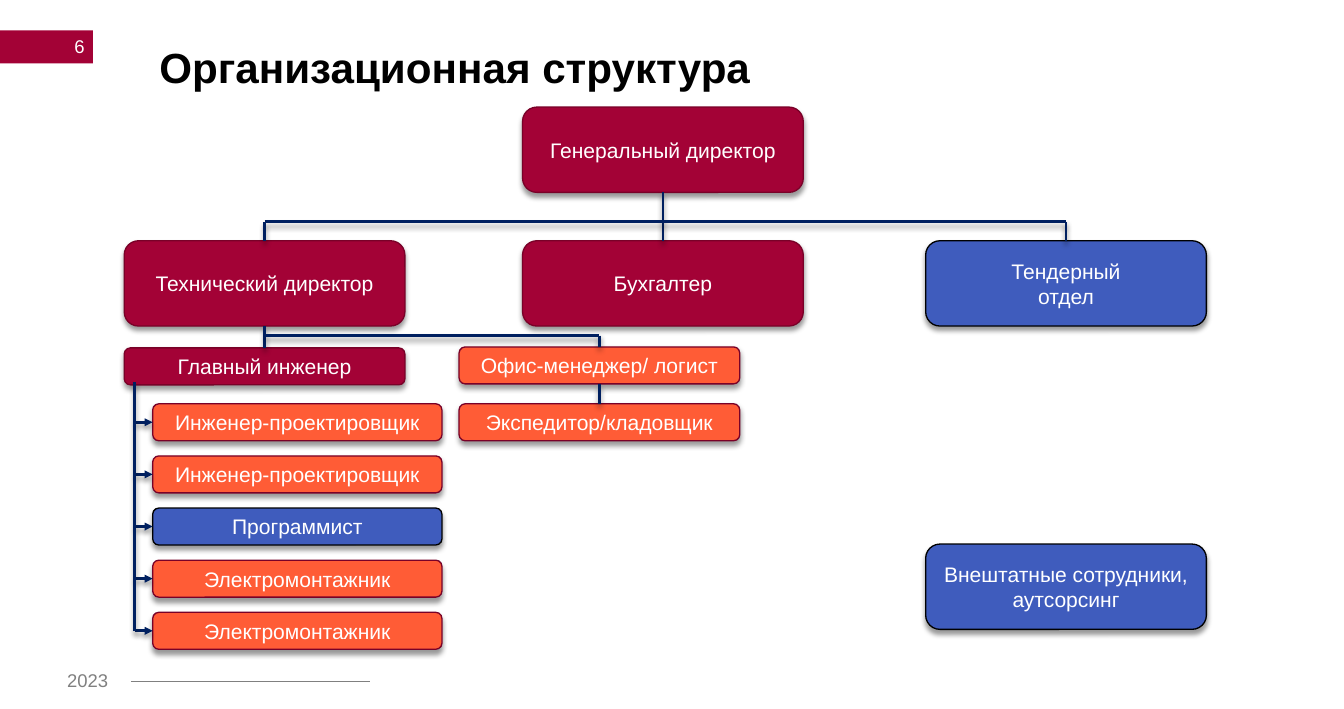
"""Builds the organisation chart slide."""
import pptx
import pptx.util
import pptx.dml.color
import pptx.enum.shapes
import pptx.enum.text
import pptx.oxml
import pptx.oxml.ns

Inches, Pt = pptx.util.Inches, pptx.util.Pt
ALIGN = pptx.enum.text.PP_ALIGN
ANCHOR = pptx.enum.text.MSO_ANCHOR
SHAPE = pptx.enum.shapes.MSO_SHAPE
LINE = pptx.enum.shapes.MSO_CONNECTOR.STRAIGHT

TITLE = "Организационная структура"
YEAR, PAGE = "2023", "6"
RED, ORANGE, BLUE = "A30236", "FF5C36", "3F5CBD"
EDGES = {RED: "790128", ORANGE: "790128", BLUE: "000000"}
NAVY, GREY, WHITE, BLACK = "002060", "808080", "FFFFFF", "000000"
WIDE, TALL, LOW = 2.96, 0.9, 0.39

BOXES = {
    "head": ("Генеральный директор", 5.51, 1.13, TALL, RED),
    "tech": ("Технический директор", 1.31, 2.54, TALL, RED),
    "books": ("Бухгалтер", 5.51, 2.54, TALL, RED),
    "tender": ("Тендерный\nотдел", 9.76, 2.54, TALL, BLUE),
    "chief": ("Главный инженер", 1.31, 3.67, LOW, RED),
    "office": ("Офис-менеджер/ логист", 4.84, 3.66, LOW, ORANGE),
    "store": ("Экспедитор/кладовщик", 4.84, 4.26, LOW, ORANGE),
    "extern": ("Внештатные сотрудники,\nаутсорсинг", 9.76, 5.74, TALL, BLUE),
}
STAFF = [
    ("Инженер-проектировщик", ORANGE),
    ("Инженер-проектировщик", ORANGE),
    ("Программист", BLUE),
    ("Электромонтажник", ORANGE),
    ("Электромонтажник", ORANGE),
]
STAFF_X, STAFF_Y, STAFF_W, STEP = 1.61, 4.26, 3.05, 0.55
SPINE_X, SPINE_Y = 1.42, 4.03
LINKS = [("head", "books"), ("tech", "chief"), ("office", "store")]
BARS = [(2.34, "tech", "tender"), (3.54, "chief", "office")]
DROPS = [(2.34, "tech"), (2.34, "tender"), (3.54, "office")]

deck = pptx.Presentation()
deck.slide_width, deck.slide_height = Inches(14.17), Inches(7.48)
slide = deck.slides.add_slide(deck.slide_layouts[5])
shapes = slide.shapes


def color(code):
    return pptx.dml.color.RGBColor.from_string(code)


def style(frame, size, code, align, bold=False):
    for para in frame.paragraphs:
        para.alignment = align
        for run in para.runs:
            run.font.name, run.font.size = "Arial", Pt(size)
            run.font.bold = bold
            run.font.color.rgb = color(code)


def effect(shape, shade=True):
    for old in shape._element.spPr.findall(pptx.oxml.ns.qn("a:effectLst")):
        shape._element.spPr.remove(old)
    glow = ('<a:outerShdw blurRad="50800" dist="38100" dir="5400000" rotWithShape="0">'
            '<a:srgbClr val="000000"><a:alpha val="40000"/></a:srgbClr></a:outerShdw>')
    shape._element.spPr.append(pptx.oxml.parse_xml(
        f'<a:effectLst {pptx.oxml.ns.nsdecls("a")}>{glow if shade else ""}</a:effectLst>'))


def label(text, x, y, w, h, code, align, anchor):
    frame = shapes.add_textbox(Inches(x), Inches(y), Inches(w), Inches(h)).text_frame
    frame.word_wrap = True
    frame.vertical_anchor = anchor
    frame.text = text
    style(frame, 14, code, align)


def box(text, x, y, w, h, fill):
    shape = shapes.add_shape(SHAPE.ROUNDED_RECTANGLE, Inches(x), Inches(y),
                             Inches(w), Inches(h))
    shape.fill.solid()
    shape.fill.fore_color.rgb = color(fill)
    shape.line.color.rgb = color(EDGES[fill])
    shape.line.width = Pt(1)
    effect(shape)
    frame = shape.text_frame
    frame.word_wrap = True
    frame.vertical_anchor = ANCHOR.MIDDLE
    frame.text = text
    style(frame, 16, WHITE, ALIGN.CENTER)
    return shape


def wire(x, y, x2, y2, code=NAVY, width=2, shade=True, arrow=False):
    line = shapes.add_connector(LINE, Inches(x), Inches(y), Inches(x2), Inches(y2))
    line.line.color.rgb = color(code)
    line.line.width = Pt(width)
    if arrow:
        line.line._get_or_add_ln().append(pptx.oxml.parse_xml(
            f'<a:tailEnd {pptx.oxml.ns.nsdecls("a")} type="triangle"/>'))
    effect(line, shade)
    return line


def mid(name):
    return BOXES[name][1] + WIDE / 2


flag = shapes.add_shape(SHAPE.RECTANGLE, 0, Inches(0.32), Inches(0.98), Inches(0.35))
flag.shadow.inherit = False
flag.fill.solid()
flag.fill.fore_color.rgb = color(RED)
flag.line.fill.background()
label(PAGE, 0.18, 0.29, 0.81, 0.4, WHITE, ALIGN.RIGHT, ANCHOR.MIDDLE)
label(YEAR, 0.61, 7.01, 0.67, 0.34, GREY, ALIGN.LEFT, ANCHOR.TOP)
wire(1.38, 7.19, 3.9, 7.19, GREY, 1.5, shade=False)

title = shapes.title
title.left, title.top = Inches(1.68), Inches(0.5)
title.width, title.height = Inches(11.72), Inches(0.78)
frame = title.text_frame
frame.auto_size = pptx.enum.text.MSO_AUTO_SIZE.NONE
frame.margin_left = frame.margin_right = frame.margin_top = frame.margin_bottom = 0
frame.vertical_anchor = ANCHOR.TOP
frame.text = TITLE
frame.paragraphs[0].line_spacing = 0.9
style(frame, 32, BLACK, ALIGN.LEFT, bold=True)

made = {name: box(text, x, y, WIDE, h, fill)
        for name, (text, x, y, h, fill) in BOXES.items()}

for top, low in LINKS:
    line = wire(mid(top), 2, mid(low), 3)
    line.begin_connect(made[top], 2)
    line.end_connect(made[low], 0)
for y, left, right in BARS:
    wire(mid(left), y, mid(right), y)
for y, name in DROPS:
    wire(mid(name), y, mid(name), BOXES[name][2]).end_connect(made[name], 0)

for i, (text, fill) in enumerate(STAFF):
    y = STAFF_Y + i * STEP
    row = y + LOW / 2
    post = box(text, STAFF_X, y, STAFF_W, LOW, fill)
    wire(SPINE_X, row, STAFF_X, row, arrow=True).end_connect(post, 1)
wire(SPINE_X, SPINE_Y, SPINE_X, row)

deck.save("out.pptx")
